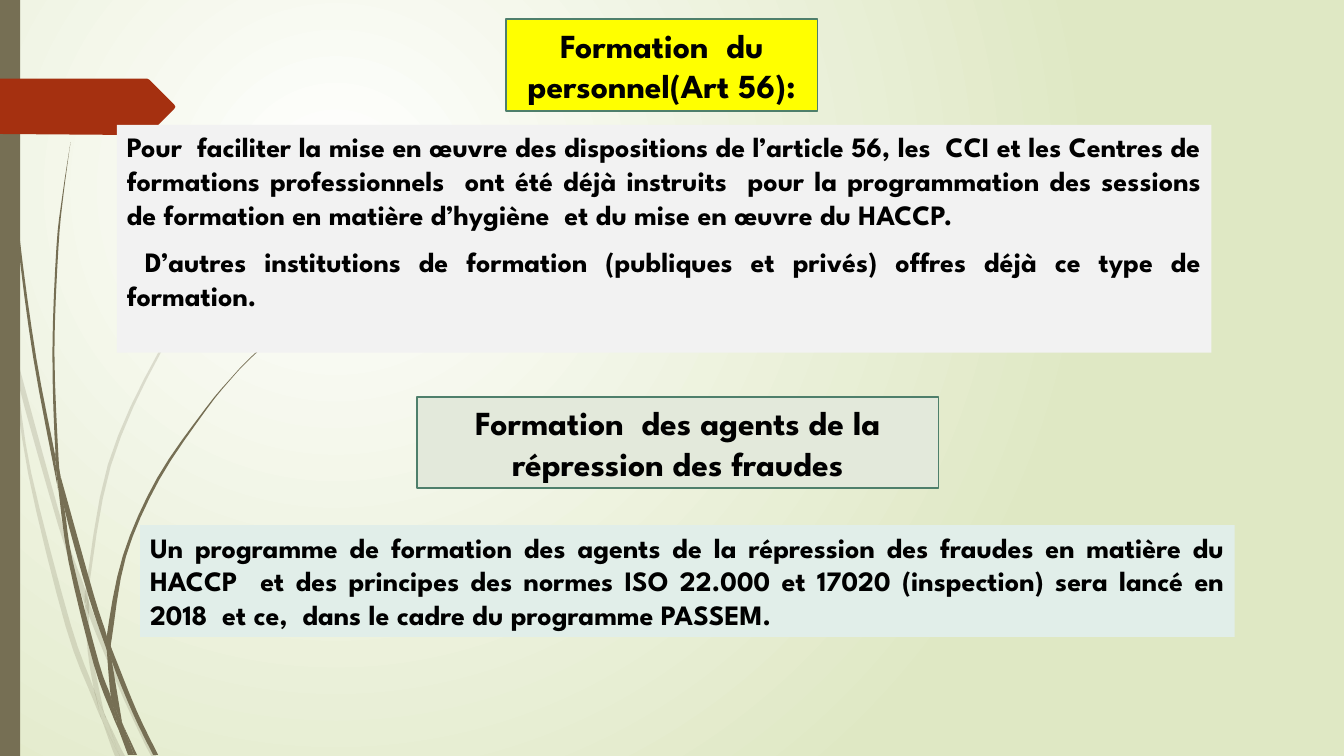
from pptx import Presentation
from pptx.dml.color import RGBColor
from pptx.enum.shapes import MSO_SHAPE
from pptx.enum.text import MSO_ANCHOR, MSO_AUTO_SIZE, PP_ALIGN
from pptx.oxml import parse_xml
from pptx.oxml.ns import nsdecls, qn
from pptx.util import Pt

PX = 9144
FONT = "League Spartan"
BARK, RED, BLACK, GREEN = "766F54", "A53010", "000000", "4E7F6B"


def paint(fill, color):
    fill.solid()
    fill.fore_color.rgb = RGBColor.from_string(color)


def smooth(edge):
    points = [edge[0]]
    padded = [edge[0], *edge, edge[-1]]
    for a, b, c, d in zip(padded, padded[1:], padded[2:], padded[3:]):
        for t in (0.25, 0.5, 0.75, 1):
            points.append(tuple(
                (2 * q + (r - p) * t + (2 * p - 5 * q + 4 * r - s) * t**2
                 + (3 * q - p - 3 * r + s) * t**3) / 2
                for p, q, r, s in zip(a, b, c, d)))
    return points


prs = Presentation()
prs.slide_width, prs.slide_height = 4000 * PX // 3, 750 * PX
slide = prs.slides.add_slide(prs.slide_layouts[5])
shapes = slide.shapes

bg = slide.background.fill
bg.gradient()
for stop, color in zip(bg.gradient_stops, ("FFFFFF", "DFE8C4")):
    stop.color.rgb = RGBColor.from_string(color)
grad = slide.element.find(".//" + qn("a:gradFill"))
grad.replace(grad.find(qn("a:lin")), parse_xml(
    f'<a:path {nsdecls("a")} path="circle">'
    '<a:fillToRect l="50000" t="50000" r="100000" b="100000"/></a:path>'))

pale_blades = [
    ([(0, 299), (10, 344), (11, 350)], [(0, 282), (9, 322), (11, 350)]),
    ([(14, 345), (17, 376), (58, 522), (84, 599)],
     [(14, 345), (62, 520), (85, 586), (84, 599)]),
    ([(88, 596), (88, 610), (123, 694), (150, 751)],
     [(88, 596), (92, 607), (127, 692), (155, 751)]),
    ([(105, 711), (119, 751)], [(105, 711), (124, 751)]),
    ([(11, 350), (28, 470), (65, 621), (92, 693), (101, 714)],
     [(11, 350), (17, 376), (31, 469), (70, 619), (93, 683), (99, 707), (101, 714)]),
    ([(84, 599), (87, 646), (93, 683), (96, 692), (105, 711)],
     [(84, 599), (88, 608), (88, 610), (91, 646), (103, 706), (105, 711)]),
    ([(312, 153), (289, 175), (268, 197), (228, 244), (158, 348), (107, 461),
      (85, 584), (85, 586), (88, 596)],
     [(312, 154), (290, 175), (268, 198), (229, 245), (160, 349), (110, 462),
      (88, 584), (88, 596)]),
    ([(101, 714), (114, 751)], [(101, 714), (119, 751)]),
    ([(85, 586), (84, 599), (88, 608), (88, 610)], [(85, 586), (88, 596), (88, 610)]),
    ([(93, 683), (99, 707), (101, 714), (119, 751)],
     [(93, 683), (96, 692), (105, 711), (119, 751)]),
]
dark_blades = [
    ([(3, 0), (4, 48), (7, 110), (17, 233), (33, 355), (56, 477), (57, 481)],
     [(4, 0), (5, 48), (8, 109), (19, 232), (36, 355), (55, 453), (55, 457),
      (57, 481)]),
    ([(60, 472), (64, 505), (88, 592), (106, 645)],
     [(60, 472), (93, 590), (106, 631), (106, 645)]),
    ([(110, 641), (111, 656), (132, 708), (152, 749)],
     [(110, 641), (113, 649), (136, 706), (157, 749)]),
    ([(57, 477), (68, 557), (93, 659), (111, 708), (117, 722)],
     [(57, 477), (64, 505), (72, 556), (98, 657), (110, 691), (116, 717), (117, 722)]),
    ([(70, 141), (62, 193), (56, 245), (52, 349), (55, 449), (60, 472)],
     [(70, 141), (63, 193), (58, 245), (54, 349), (58, 453), (60, 472)]),
    ([(122, 719), (133, 749)], [(122, 719), (136, 749)]),
    ([(55, 449), (55, 453), (57, 477), (64, 505)], [(55, 449), (60, 472), (64, 505)]),
    ([(260, 344), (245, 358), (231, 373), (204, 405), (156, 474), (122, 551),
      (106, 631), (110, 641)],
     [(261, 344), (245, 359), (231, 374), (205, 406), (158, 476), (125, 552),
      (111, 633), (110, 641)]),
    ([(117, 722), (127, 749)], [(117, 722), (131, 749)]),
    ([(106, 645), (110, 691), (116, 706), (122, 719)],
     [(106, 645), (109, 651), (111, 656), (121, 716), (122, 719)]),
    ([(106, 631), (106, 645), (109, 651), (111, 656)],
     [(106, 631), (110, 641), (111, 656)]),
    ([(110, 691), (116, 717), (117, 722), (130, 749)],
     [(110, 691), (116, 706), (122, 719), (133, 749)]),
]
arrow = [(0, 78), (146, 78), (148, 79), (173, 104), (174, 106), (173, 108),
         (148, 133), (146, 134), (136, 134), (0, 133)]

bar = shapes.add_shape(MSO_SHAPE.RECTANGLE, 0, 0, 20 * PX, 750 * PX)
bar.shadow.inherit = False
bar.line.fill.background()
paint(bar.fill, BARK)

outlines = [(smooth(left) + smooth(right)[::-1], BARK, alpha)
            for blades, alpha in ((pale_blades, 20), (dark_blades, 100))
            for left, right in blades]
outlines.append((arrow, RED, 100))

for points, color, alpha in outlines:
    points = [(round(x * PX), round(min(y, 750) * PX)) for x, y in points]
    builder = shapes.build_freeform(*points[0], scale=1.0)
    builder.add_line_segments(points[1:], close=True)
    sp = builder.convert_to_shape()
    sp.shadow.inherit = False
    sp.line.fill.background()
    paint(sp.fill, color)
    if alpha < 100:
        clr = sp._element.spPr.find(".//" + qn("a:srgbClr"))
        clr.append(parse_xml(f'<a:alpha {nsdecls("a")} val="{alpha * 1000}"/>'))

boxes = [
    ((502, 19, 309, 91), "FFFF00", True, ["Formation  du personnel(Art 56):"]),
    ((116, 124, 1086, 226), "F2F2F2", False, [
        "Pour  faciliter la mise en œuvre des dispositions de l’article 56, les  CCI "
        "et les Centres de formations professionnels  ont été déjà instruits  pour la "
        "programmation des sessions de formation en matière d’hygiène  et du mise en "
        "œuvre du HACCP.",
        "D’autres institutions de formation (publiques et privés) offres déjà ce type "
        "de formation."]),
    ((414, 394, 517, 90), "E3E9DB", True,
     ["Formation  des agents de la répression des fraudes"]),
    ((139, 521, 1086, 111), "E1EEE9", False, [
        "Un programme de formation des agents de la répression des fraudes en matière "
        "du HACCP  et des principes des normes ISO 22.000 et 17020 (inspection) sera "
        "lancé en 2018  et ce,  dans le cadre du programme PASSEM."]),
]
for i, (frame, color, heading, texts) in enumerate(boxes):
    x, y, w, h = (n * PX for n in frame)
    if i == 0:
        sp = shapes.title
        sp.left, sp.top, sp.width, sp.height = x, y, w, h
    else:
        sp = shapes.add_shape(MSO_SHAPE.RECTANGLE, x, y, w, h)
        sp.shadow.inherit = False
    paint(sp.fill, color)
    if heading:
        paint(sp.line.fill, GREEN)
        sp.line.width = Pt(1.25)
    else:
        sp.line.fill.background()
    tf = sp.text_frame
    tf.text = "\n".join(texts)
    tf.word_wrap = True
    tf.auto_size = MSO_AUTO_SIZE.NONE
    tf.vertical_anchor = MSO_ANCHOR.MIDDLE if heading else MSO_ANCHOR.TOP
    for n, p in enumerate(tf.paragraphs):
        p.alignment = PP_ALIGN.CENTER if heading else PP_ALIGN.JUSTIFY
        if n:
            p.space_before = Pt(10)
            p._p.get_or_add_pPr().set("indent", str(18 * PX))
        for r in p.runs:
            r.font.name = FONT
            r.font.size = Pt(24 if heading else 20)
            r.font.bold = True
            paint(r.font.fill, BLACK)

prs.save("out.pptx")
